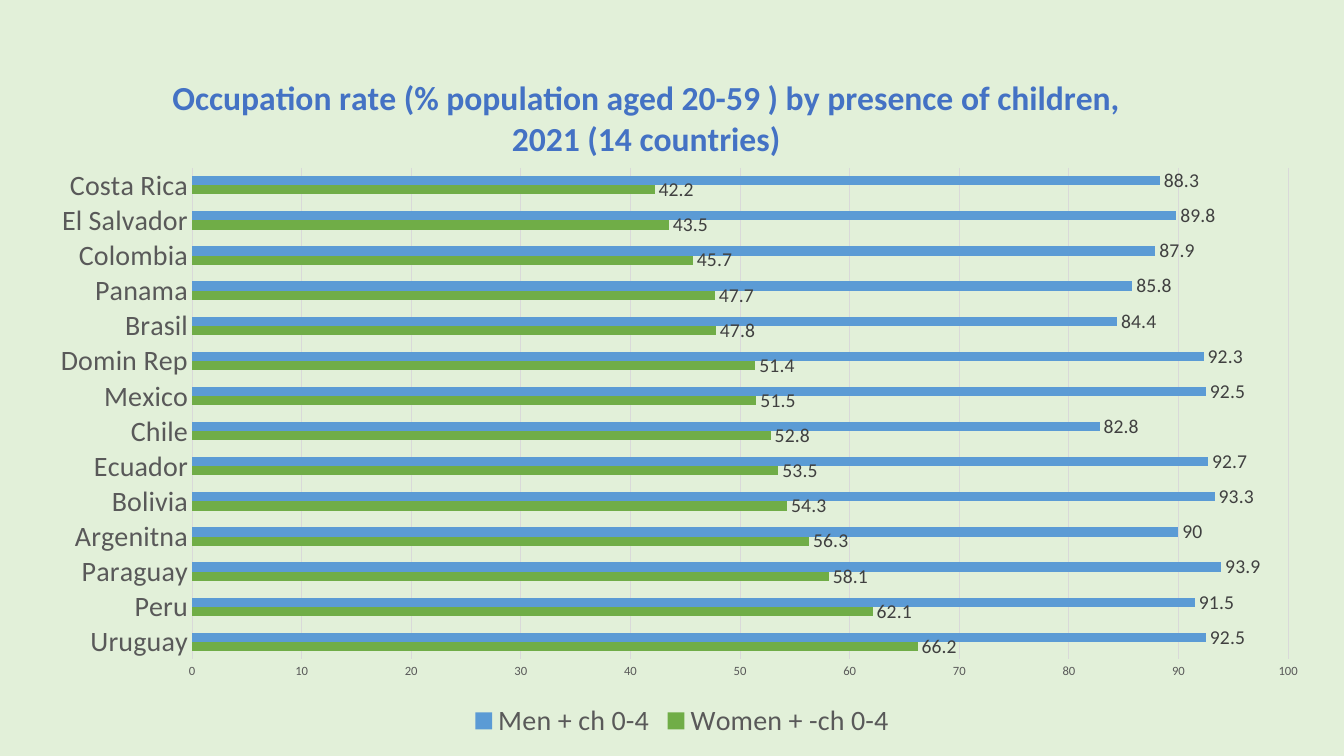
import pptx
import pptx.chart.data
import pptx.dml.color
import pptx.enum.chart
import pptx.oxml
import pptx.oxml.ns
import pptx.util

Inches = pptx.util.Inches
Pt = pptx.util.Pt
qn = pptx.oxml.ns.qn

COLORS = {
    "background": "E2F0D9",
    "title": "4472C4",
    "axis_text": "595959",
    "label_text": "404040",
    "grid": "D9D9D9",
    "women": "70AD47",
    "men": "5B9BD5",
}
TITLE = ("Occupation rate (% population aged 20-59 ) by presence of children, "
         "2021 (14 countries)")
# country, women's rate, men's rate
RATES = [
    ("Uruguay", 66.2, 92.5),
    ("Peru", 62.1, 91.5),
    ("Paraguay", 58.1, 93.9),
    ("Argenitna", 56.3, 90),
    ("Bolivia", 54.3, 93.3),
    ("Ecuador", 53.5, 92.7),
    ("Chile", 52.8, 82.8),
    ("Mexico", 51.5, 92.5),
    ("Domin Rep", 51.4, 92.3),
    ("Brasil", 47.8, 84.4),
    ("Panama", 47.7, 85.8),
    ("Colombia", 45.7, 87.9),
    ("El Salvador", 43.5, 89.8),
    ("Costa Rica", 42.2, 88.3),
]


def color(name):
    return pptx.dml.color.RGBColor.from_string(COLORS[name])


def place(parent, index, **fractions):
    """Give a chart part a manual layout, in fractions of the chart area."""
    for layout in parent.findall(qn("c:layout")):
        parent.remove(layout)
    target = '<c:layoutTarget val="inner"/>' if "w" in fractions else ""
    modes = "".join(f'<c:{key}Mode val="edge"/>' for key in "xy")
    values = "".join(f'<c:{key} val="{value}"/>' for key, value in fractions.items())
    parent.insert(index, pptx.oxml.parse_xml(
        f'<c:layout {pptx.oxml.ns.nsdecls("c")}><c:manualLayout>'
        f'{target}{modes}{values}</c:manualLayout></c:layout>'))


class ChartSlide:
    font_name = "Calibri"

    def __init__(self, presentation):
        self.slide = presentation.slides.add_slide(presentation.slide_layouts[6])
        fill = self.slide.background.fill
        fill.solid()
        fill.fore_color.rgb = color("background")

    def style_font(self, font, size, color_name, bold=False):
        font.name = self.font_name
        font.size = Pt(size)
        font.bold = bold
        font.color.rgb = color(color_name)

    def style_line(self, line):
        line.color.rgb = color("grid")
        line.width = Pt(0.75)

    def add_bar_chart(self, left, top, width, height):
        countries, women, men = zip(*RATES)
        data = pptx.chart.data.CategoryChartData(number_format="General")
        data.categories = countries
        data.add_series("Women + -ch 0-4", women)
        data.add_series("Men + ch 0-4", men)
        chart = self.slide.shapes.add_chart(
            pptx.enum.chart.XL_CHART_TYPE.BAR_CLUSTERED,
            Inches(left), Inches(top), Inches(width), Inches(height), data).chart
        chart.font.name = self.font_name
        chart.font.size = Pt(10)
        plot = chart.plots[0]
        plot.gap_width = 182
        plot.vary_by_categories = False
        for series, color_name in zip(plot.series, ("women", "men")):
            self.style_series(series, color_name)
        place(chart.element.find(".//" + qn("c:plotArea")), 0,
              x=0.12, y=0.18, w=0.85, h=0.7)
        return chart

    def style_series(self, series, color_name):
        series.format.fill.solid()
        series.format.fill.fore_color.rgb = color(color_name)
        series.invert_if_negative = False
        labels = series.data_labels
        labels.show_value = True
        labels.position = pptx.enum.chart.XL_LABEL_POSITION.OUTSIDE_END
        self.style_font(labels.font, 14, "label_text")

    def style_axes(self, chart):
        for axis, size in ((chart.category_axis, 20), (chart.value_axis, 9)):
            axis.major_tick_mark = pptx.enum.chart.XL_TICK_MARK.NONE
            axis.minor_tick_mark = pptx.enum.chart.XL_TICK_MARK.NONE
            self.style_font(axis.tick_labels.font, size, "axis_text")
        self.style_line(chart.category_axis.format.line)
        value_axis = chart.value_axis
        value_axis.minimum_scale = 0
        value_axis.maximum_scale = 100
        value_axis.major_unit = 10
        value_axis.format.line.fill.background()
        self.style_line(value_axis.major_gridlines.format.line)

    def add_title(self, chart, text):
        chart.has_title = True
        title = chart.chart_title
        run = title.text_frame.paragraphs[0].add_run()
        run.text = text
        self.style_font(run.font, 24, "title", bold=True)
        title.include_in_layout = False
        place(title.element, 1, x=0.1, y=0.04)

    def add_legend(self, chart):
        chart.has_legend = True
        chart.legend.position = pptx.enum.chart.XL_LEGEND_POSITION.BOTTOM
        chart.legend.include_in_layout = False
        self.style_font(chart.legend.font, 20, "axis_text")


def main():
    presentation = pptx.Presentation()
    presentation.slide_width = Inches(13.33)
    presentation.slide_height = Inches(7.5)
    page = ChartSlide(presentation)
    chart = page.add_bar_chart(0.37, 0.41, 12.79, 6.97)
    page.style_axes(chart)
    page.add_title(chart, TITLE)
    page.add_legend(chart)
    presentation.save("out.pptx")


if __name__ == "__main__":
    main()
